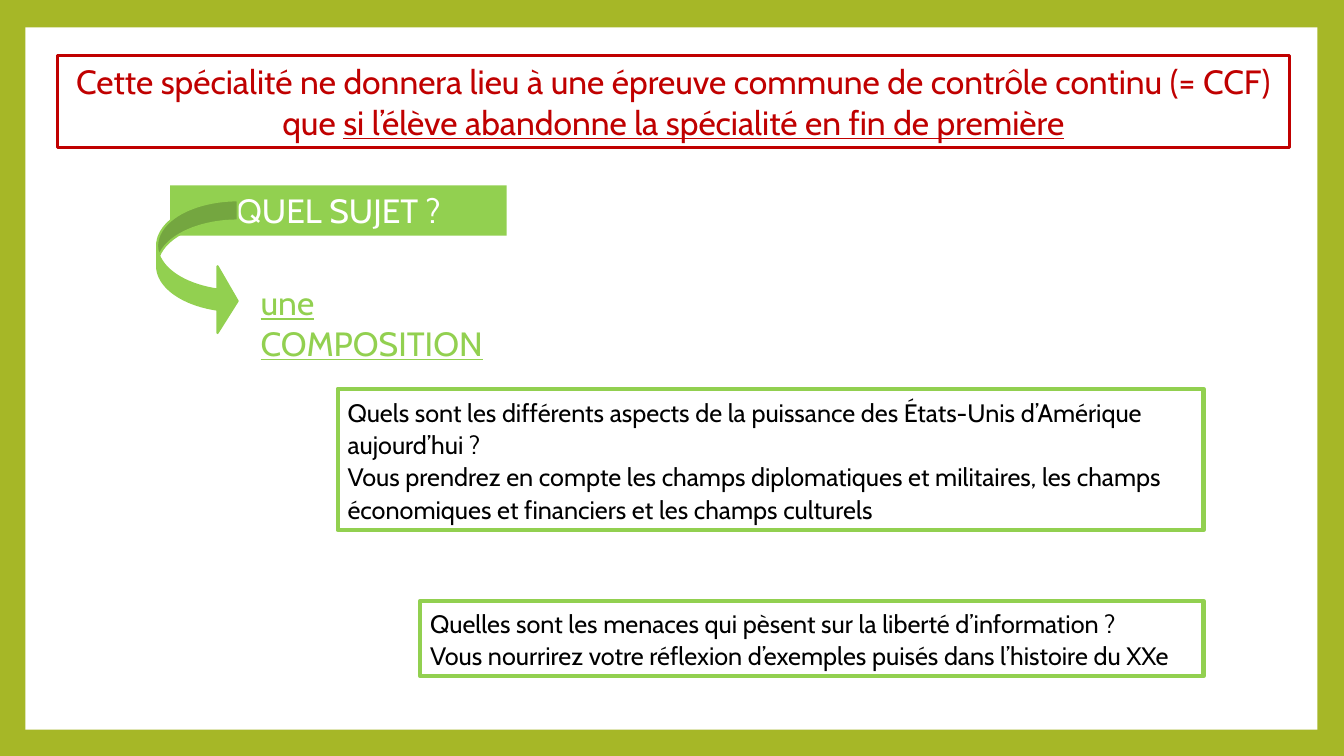
from pptx import Presentation
from pptx.dml.color import RGBColor
from pptx.enum import shapes, text
from pptx.util import Cm, Pt

OLIVE = RGBColor(0xA6, 0xB7, 0x27)
GREEN = RGBColor(0x92, 0xD0, 0x50)
RED = RGBColor(0xC0, 0x00, 0x00)
WHITE = RGBColor(0xFF, 0xFF, 0xFF)
BLACK = RGBColor(0x00, 0x00, 0x00)


class Deck:
    font = "Cabin"

    def __init__(self, prs):
        self.s = prs.slides.add_slide(prs.slide_layouts[5])
        fill = self.s.background.fill
        fill.solid()
        fill.fore_color.rgb = OLIVE

    def set_text(self, sp, paragraphs, size, color, align=text.PP_ALIGN.LEFT, spacing=1.0):
        """Each paragraph is a list of (wording, underlined) runs."""
        tf = sp.text_frame
        tf.word_wrap = True
        tf.auto_size = text.MSO_AUTO_SIZE.NONE
        for i, runs in enumerate(paragraphs):
            p = tf.paragraphs[0] if i == 0 else tf.add_paragraph()
            p.alignment, p.line_spacing = align, spacing
            p.font.name, p.font.size = self.font, Pt(size)
            p.font.color.rgb = color
            for wording, underlined in runs:
                r = p.add_run()
                r.text = wording
                if underlined:
                    r.font.underline = True

    def title(self, box, runs):
        sp = self.s.shapes.title
        sp.left, sp.top, sp.width, sp.height = map(Cm, box)
        sp.line.color.rgb = RED
        sp.line.width = Pt(2.25)
        self.set_text(sp, [runs], 24, RED, text.PP_ALIGN.CENTER)

    def shape(self, box, fill=None, line=None, width=3,
              kind=shapes.MSO_SHAPE.RECTANGLE):
        sp = self.s.shapes.add_shape(kind, *map(Cm, box))
        sp.shadow.inherit = False
        if fill is None:
            sp.fill.background()
        else:
            sp.fill.solid()
            sp.fill.fore_color.rgb = fill
        if line is None:
            sp.line.fill.background()
        else:
            sp.line.color.rgb = line
            sp.line.width = Pt(width)
        return sp

    def label(self, box, wording):
        sp = self.s.shapes.add_textbox(*map(Cm, box))
        self.set_text(sp, [[(wording, True)]], 24, GREEN)

    def question(self, box, *lines):
        sp = self.shape(box, line=GREEN)
        self.set_text(sp, [[(line, False)] for line in lines], 18, BLACK, spacing=1.07)


def main():
    prs = Presentation()
    prs.slide_width, prs.slide_height = Cm(33.87), Cm(19.05)
    deck = Deck(prs)

    # White page inside the olive border, behind the title
    page = deck.shape((0.64, 0.69, 32.56, 17.7), fill=WHITE)
    deck.s.shapes.title.element.addprevious(page.element)

    # Title
    deck.title((1.45, 1.4, 31.04, 2.31), [
        ("Cette spécialité ne donnera lieu à une épreuve commune de contrôle continu (= CCF) que ", False),
        ("si l’élève abandonne la spécialité en fin de première", True)])

    # Heading, with an arrow to the kind of exam
    heading = deck.shape((4.29, 4.67, 8.48, 1.27), fill=GREEN)
    deck.set_text(heading, [[("QUEL SUJET ?", False)]], 24, WHITE, text.PP_ALIGN.CENTER)
    deck.label((6.32, 6.99, 7.37, 2.31), "une COMPOSITION")
    arrow = deck.shape((3.96, 5.05, 2.03, 3.38), GREEN, GREEN, 1.5,
                       shapes.MSO_SHAPE.CURVED_RIGHT_ARROW)
    for i, value in enumerate((0.25, 0.83, 0.25)):
        arrow.adjustments[i] = value

    # Sample questions
    deck.question(
        (8.51, 9.8, 21.82, 3.56),
        "Quels sont les différents aspects de la puissance des États-Unis d’Amérique aujourd’hui ?",
        "Vous prendrez en compte les champs diplomatiques et militaires, les champs "
        "économiques et financiers et les champs culturels")
    deck.question(
        (10.59, 15.14, 19.74, 1.9),
        "Quelles sont les menaces qui pèsent sur la liberté d’information ?",
        "Vous nourrirez votre réflexion d’exemples puisés dans l’histoire du XXe")

    prs.save("out.pptx")


if __name__ == "__main__":
    main()
